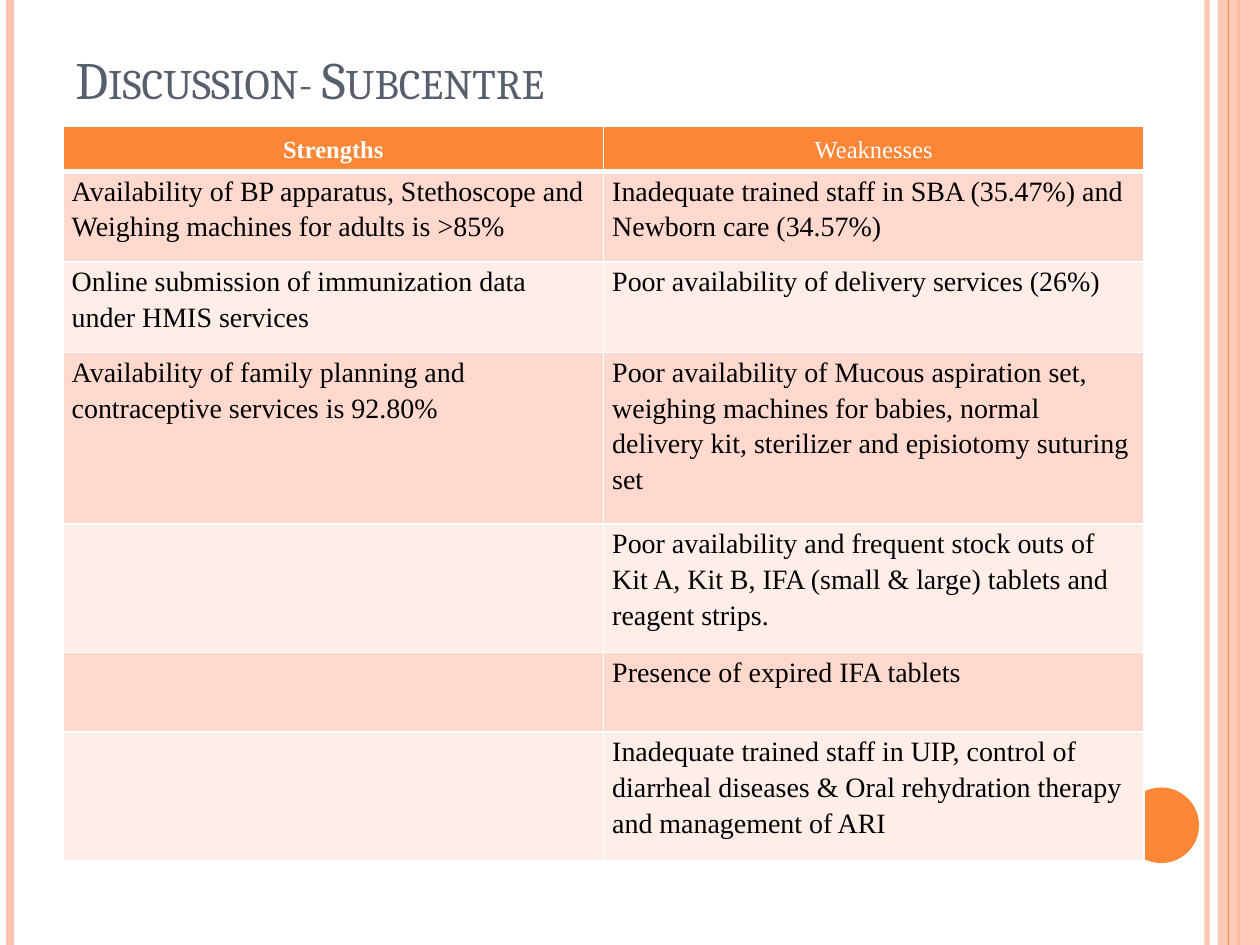
from dataclasses import dataclass

from lxml.etree import SubElement
from pptx import Presentation
from pptx.dml.color import RGBColor
from pptx.enum.shapes import MSO_CONNECTOR, MSO_SHAPE
from pptx.enum.text import MSO_ANCHOR, PP_ALIGN
from pptx.oxml.ns import qn
from pptx.util import Pt


@dataclass(frozen=True)
class Theme:
    accent: str = "FE8637"
    tint: str = "FEC3AE"
    band_dark: str = "FFD9CE"
    band_light: str = "FFEDE8"
    title: str = "575F6D"
    text: str = "000000"
    white: str = "FFFFFF"
    title_font: str = "Cambria"
    body_font: str = "Times New Roman"
    title_size: int = 30
    header_size: int = 14
    body_size: int = 16


THEME = Theme()
WIDTH, HEIGHT = 720, 540

STRIPES_BEHIND = [
    (689.76, THEME.tint, 3, 93),
    (5.76, THEME.tint, 4.5, 100),
    (707.76, THEME.accent, 1.5, 100),
]
STRIPE_FRONT = (702, THEME.accent, 0.75, 100)

ROWS = [
    (25.92, "Strengths", "Weaknesses"),
    (51.84, "Availability of BP apparatus, Stethoscope and Weighing machines for adults is >85%",
     "Inadequate trained staff in SBA (35.47%) and Newborn care (34.57%)"),
    (51.84, "Online submission of immunization data under HMIS services",
     "Poor availability of delivery services (26%)"),
    (97.92, "Availability of family planning and contraceptive services is 92.80%",
     "Poor availability of Mucous aspiration set, weighing machines for babies, "
     "normal delivery kit, sterilizer and episiotomy suturing set"),
    (73.44, "", "Poor availability and frequent stock outs of Kit A, Kit B, "
     "IFA (small & large) tablets and reagent strips."),
    (45.36, "", "Presence of expired IFA tablets"),
    (73.44, "", "Inadequate trained staff in UIP, control of diarrheal diseases "
     "& Oral rehydration therapy and management of ARI"),
]


def rgb(color):
    return RGBColor.from_string(color)


def set_opacity(element, percent):
    if percent < 100:
        color = next(element.iter(qn("a:srgbClr")))
        SubElement(color, qn("a:alpha"), val=str(percent * 1000))


def set_font(p, name, size, color, bold=False):
    p.font.name = name
    p.font.size = Pt(size)
    p.font.bold = bold
    p.font.color.rgb = rgb(color)


def add_stripe(s, x, color, width, opacity):
    line = s.shapes.add_connector(MSO_CONNECTOR.STRAIGHT, Pt(x), Pt(0), Pt(x), Pt(HEIGHT))
    line.line.color.rgb = rgb(color)
    line.line.width = Pt(width)
    sp_pr = line._element.spPr
    set_opacity(sp_pr, opacity)
    SubElement(sp_pr, qn("a:effectLst"))


def add_block(s, kind, x, y, w, h, color, opacity=100):
    sp = s.shapes.add_shape(kind, Pt(x), Pt(y), Pt(w), Pt(h))
    sp.shadow.inherit = False
    sp.fill.solid()
    sp.fill.fore_color.rgb = rgb(color)
    sp.line.fill.background()
    set_opacity(sp._element.spPr, opacity)


def add_title(s, text):
    tf = s.shapes.add_textbox(Pt(36), Pt(21.6), Pt(588), Pt(44.64)).text_frame
    tf.word_wrap = True
    tf.vertical_anchor = MSO_ANCHOR.BOTTOM
    p = tf.paragraphs[0]
    r = p.add_run()
    r.text = text
    r._r.get_or_add_rPr().set("cap", "small")
    set_font(p, THEME.title_font, THEME.title_size, THEME.title)


def set_borders(cell, top, bottom):
    tc_pr = cell._tc.get_or_add_tcPr()
    for side, width in (("L", 1), ("R", 1), ("T", top), ("B", bottom)):
        ln = SubElement(tc_pr, qn(f"a:ln{side}"), w=str(Pt(width)))
        fill = SubElement(ln, qn("a:solidFill"))
        SubElement(fill, qn("a:srgbClr"), val=THEME.white)


def fill_cell(cell, text, row, col):
    header = row == 0
    set_borders(cell, 3 if row == 1 else 1, 3 if header else 1)
    cell.fill.solid()
    band = THEME.band_dark if row % 2 else THEME.band_light
    cell.fill.fore_color.rgb = rgb(THEME.accent if header else band)
    cell.margin_left = cell.margin_right = Pt(5)
    cell.margin_top = cell.margin_bottom = Pt(0)
    cell.vertical_anchor = MSO_ANCHOR.MIDDLE if header else MSO_ANCHOR.TOP
    p = cell.text_frame.paragraphs[0]
    if text:
        p.add_run().text = text
    p.line_spacing = 1.15
    p.alignment = PP_ALIGN.CENTER if header else PP_ALIGN.LEFT
    size = THEME.header_size if header else THEME.body_size
    color = THEME.white if header else THEME.text
    set_font(p, THEME.body_font, size, color, header and col == 0)


def add_findings_table(s):
    total = sum(height for height, *_ in ROWS)
    frame = s.shapes.add_table(len(ROWS), 2, Pt(36), Pt(72), Pt(617.76), Pt(total))
    table = frame.table
    for i, (height, *texts) in enumerate(ROWS):
        table.rows[i].height = Pt(height)
        for j, text in enumerate(texts):
            fill_cell(table.cell(i, j), text, i, j)


def main():
    prs = Presentation()
    prs.slide_width, prs.slide_height = Pt(WIDTH), Pt(HEIGHT)
    s = prs.slides.add_slide(prs.slide_layouts[6])
    for stripe in STRIPES_BEHIND:
        add_stripe(s, *stripe)
    add_block(s, MSO_SHAPE.RECTANGLE, 696, 0, 24, HEIGHT, THEME.tint, 87)
    add_stripe(s, *STRIPE_FRONT)
    add_block(s, MSO_SHAPE.OVAL, 642, 450, 43.2, 43.2, THEME.accent)
    add_title(s, "Discussion- Subcentre")
    add_findings_table(s)
    prs.save("out.pptx")


if __name__ == "__main__":
    main()
